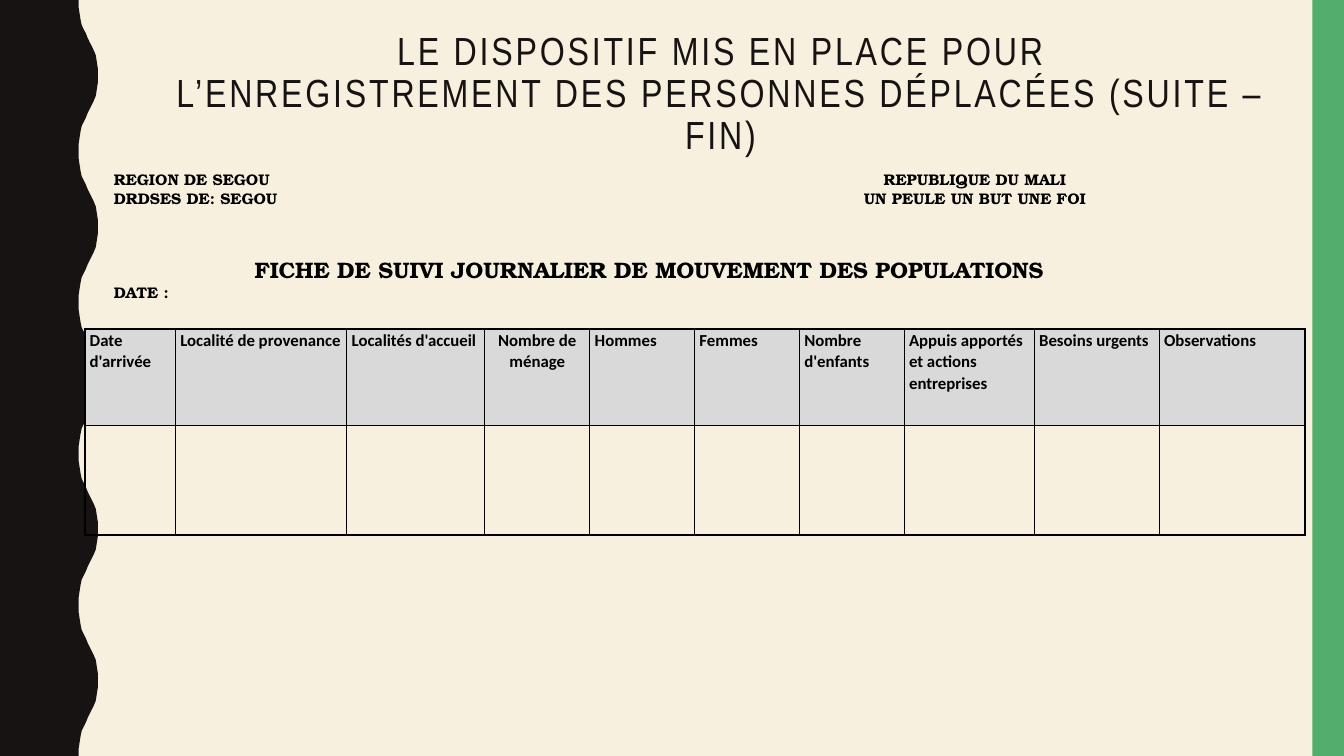
import pptx
import pptx.util
import pptx.dml.color
import pptx.enum.shapes
import pptx.enum.text
import pptx.oxml
import pptx.oxml.ns

INK = {"cream": "F7F0DF", "dark": "171312", "green": "53AE6E",
       "black": "000000", "grey": "D9D9D9"}
ALIGN = pptx.enum.text.PP_ALIGN
LEFT, MID = ALIGN.LEFT, ALIGN.CENTER
SERIF = "TeX Gyre Bonum"


class Sheet:
    def __init__(self, deck):
        self.wide, self.high = deck.slide_width, deck.slide_height
        self.slide = deck.slides.add_slide(deck.slide_layouts[6])
        self.shapes = self.slide.shapes
        self.paint(self.slide.background.fill, "cream")

    def across(self, part):
        return round(self.wide * part / 100)

    def down(self, part):
        return round(self.high * part / 100)

    def area(self, left, top, width, height):
        return (self.across(left), self.down(top),
                self.across(width), self.down(height))

    def color(self, name):
        return pptx.dml.color.RGBColor.from_string(INK[name])

    def paint(self, fill, name):
        fill.solid()
        fill.fore_color.rgb = self.color(name)

    def plain(self, shape, name):
        shape.shadow.inherit = False
        self.paint(shape.fill, name)
        shape.line.fill.background()

    def block(self, place, name):
        kind = pptx.enum.shapes.MSO_SHAPE.RECTANGLE
        self.plain(self.shapes.add_shape(kind, *self.area(*place)), name)

    def outline(self, points, name):
        spots = [(self.across(x), self.down(y)) for x, y in points]
        pen = self.shapes.build_freeform(*spots[0])
        pen.add_line_segments(spots[1:], close=True)
        self.plain(pen.convert_to_shape(), name)

    def words(self, para, line, size, font, name, bold=True, gap=None):
        run = para.add_run()
        run.text = line
        run.font.size = pptx.util.Pt(size)
        run.font.name = font
        run.font.bold = bold
        run.font.color.rgb = self.color(name)
        if gap:
            run._r.get_or_add_rPr().set("spc", str(gap * 100))

    def text(self, place, lines, font=SERIF, name="black", bold=True,
             gap=None, space=1.0):
        frame = self.shapes.add_textbox(*self.area(*place)).text_frame
        frame.word_wrap = True
        for i, (line, size, align) in enumerate(lines):
            para = frame.add_paragraph() if i else frame.paragraphs[0]
            para.alignment = align
            para.line_spacing = space
            self.words(para, line, size, font, name, bold, gap)

    def edge(self, cell, side, width):
        props = cell._tc.get_or_add_tcPr()
        props.append(pptx.oxml.parse_xml(
            f'<a:{side} {pptx.oxml.ns.nsdecls("a")} w="{pptx.util.Pt(width)}">'
            f'<a:solidFill><a:srgbClr val="{INK["black"]}"/></a:solidFill>'
            f'</a:{side}>'))

    def table(self, left, top, cols, rows, heads):
        place = self.area(left, top, sum(cols), sum(rows))
        grid = self.shapes.add_table(len(rows), len(cols), *place).table
        grid.first_row = grid.horz_banding = False
        for col, width in zip(grid.columns, cols):
            col.width = self.across(width)
        for row, height in zip(grid.rows, rows):
            row.height = self.down(height)
        for r in range(len(rows)):
            for c, (line, align) in enumerate(heads):
                cell = grid.cell(r, c)
                cell.margin_left = cell.margin_right = pptx.util.Inches(0.05)
                cell.margin_top = cell.margin_bottom = 0
                outer = {"lnL": c == 0, "lnR": c == len(cols) - 1,
                         "lnT": r == 0, "lnB": r == len(rows) - 1}
                for side, thick in outer.items():
                    self.edge(cell, side, 1.5 if thick else 0.75)
                if r:
                    cell.fill.background()
                    continue
                self.paint(cell.fill, "grey")
                para = cell.text_frame.paragraphs[0]
                para.alignment = align
                para.line_spacing = 1.07
                self.words(para, line, 12, "Calibri", "black")


def wave():
    rise = [(5.85, 0), (5.85, 0.93), (5.93, 1.87), (6, 2.67), (6.08, 3.33),
            (6.23, 3.87), (6.38, 4.4), (6.53, 5.07), (6.68, 5.6),
            (6.83, 6.13), (6.98, 6.67), (7.13, 7.33), (7.2, 8.13),
            (7.28, 9.07), (7.28, 10)]
    fall = [(x, 20 - y) for x, y in rise[-2::-1]]
    curve = [(x, y + 20 * n) for n in range(5) for x, y in rise + fall]
    return [(0, 0)] + curve + [(0, 100)]


def main():
    deck = pptx.Presentation()
    deck.slide_width = pptx.util.Inches(13.33)
    deck.slide_height = pptx.util.Inches(7.5)
    sheet = Sheet(deck)
    sheet.outline(wave(), "dark")
    sheet.block((97.65, 0, 2.35, 100), "green")
    sheet.text((9.98, 3.47, 87.25, 18),
               [("LE DISPOSITIF MIS EN PLACE POUR", 28, MID),
                ("L’ENREGISTREMENT DES PERSONNES DÉPLACÉES (SUITE –FIN)",
                 28, MID)],
               "Arial Narrow", "dark", False, 2, 0.9)
    heads = [("Date d'arrivée", LEFT), ("Localité de provenance", LEFT),
             ("Localités d'accueil", LEFT), ("Nombre de ménage", MID),
             ("Hommes", LEFT), ("Femmes", LEFT), ("Nombre d'enfants", LEFT),
             ("Appuis apportés et actions entreprises", LEFT),
             ("Besoins urgents", LEFT), ("Observations", LEFT)]
    cols = [6.75, 12.75, 10.28] + [7.8] * 4 + [9.68, 9.3, 10.88]
    sheet.table(6.3, 43.47, cols, [12.8, 14.53], heads)
    sheet.text((7.73, 21.87, 40, 6),
               [("REGION DE SEGOU", 11, LEFT),
                ("DRDSES DE: SEGOU", 11, LEFT)])
    sheet.text((57.54, 21.87, 30, 6),
               [("REPUBLIQUE DU MALI", 11, MID),
                ("UN PEULE UN BUT UNE FOI", 11, MID)])
    sheet.text((7.73, 33.2, 81.17, 7.5),
               [("FICHE DE SUIVI JOURNALIER DE MOUVEMENT DES POPULATIONS",
                 16, MID), ("DATE :", 11, LEFT)])
    deck.save("out.pptx")


if __name__ == "__main__":
    main()
